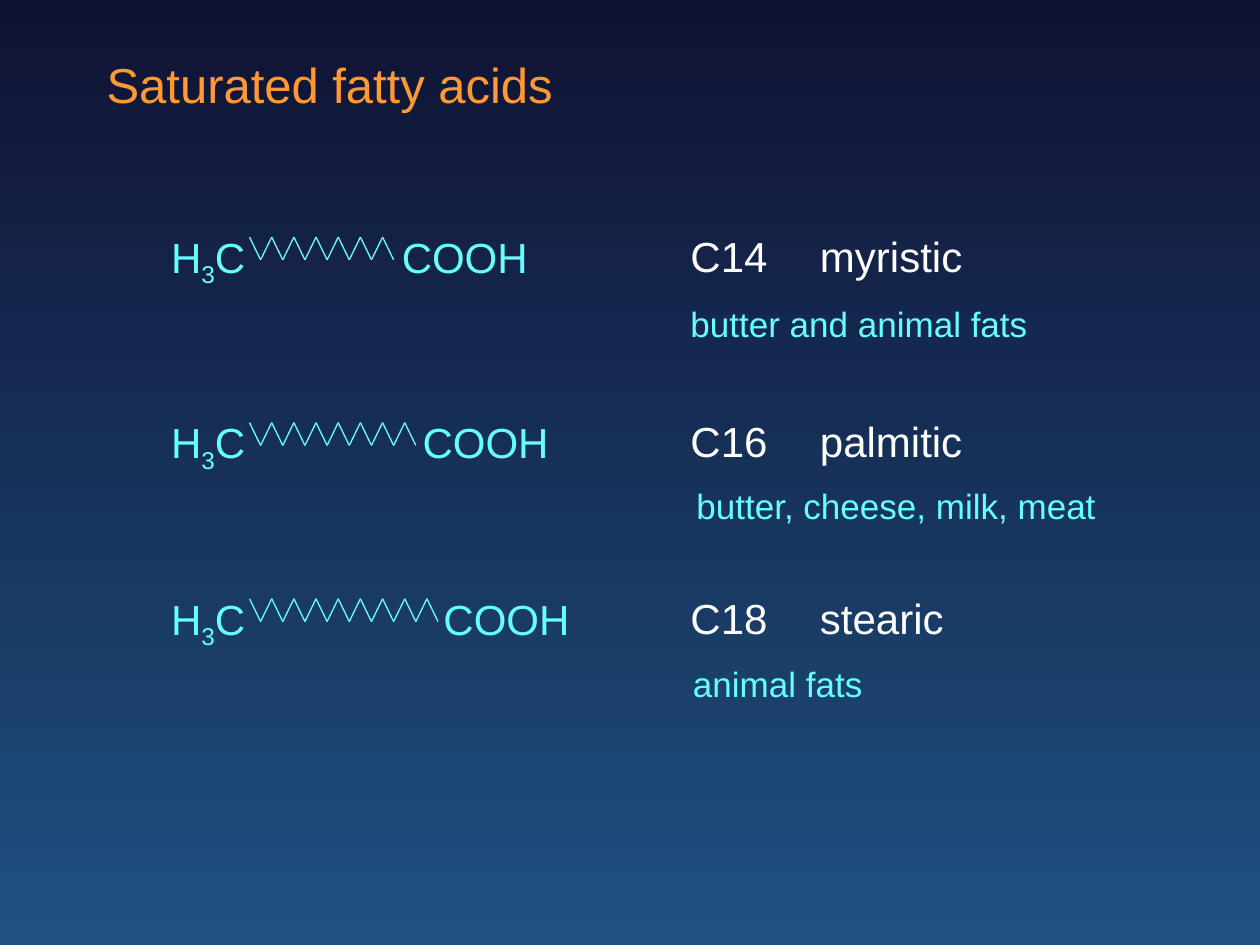
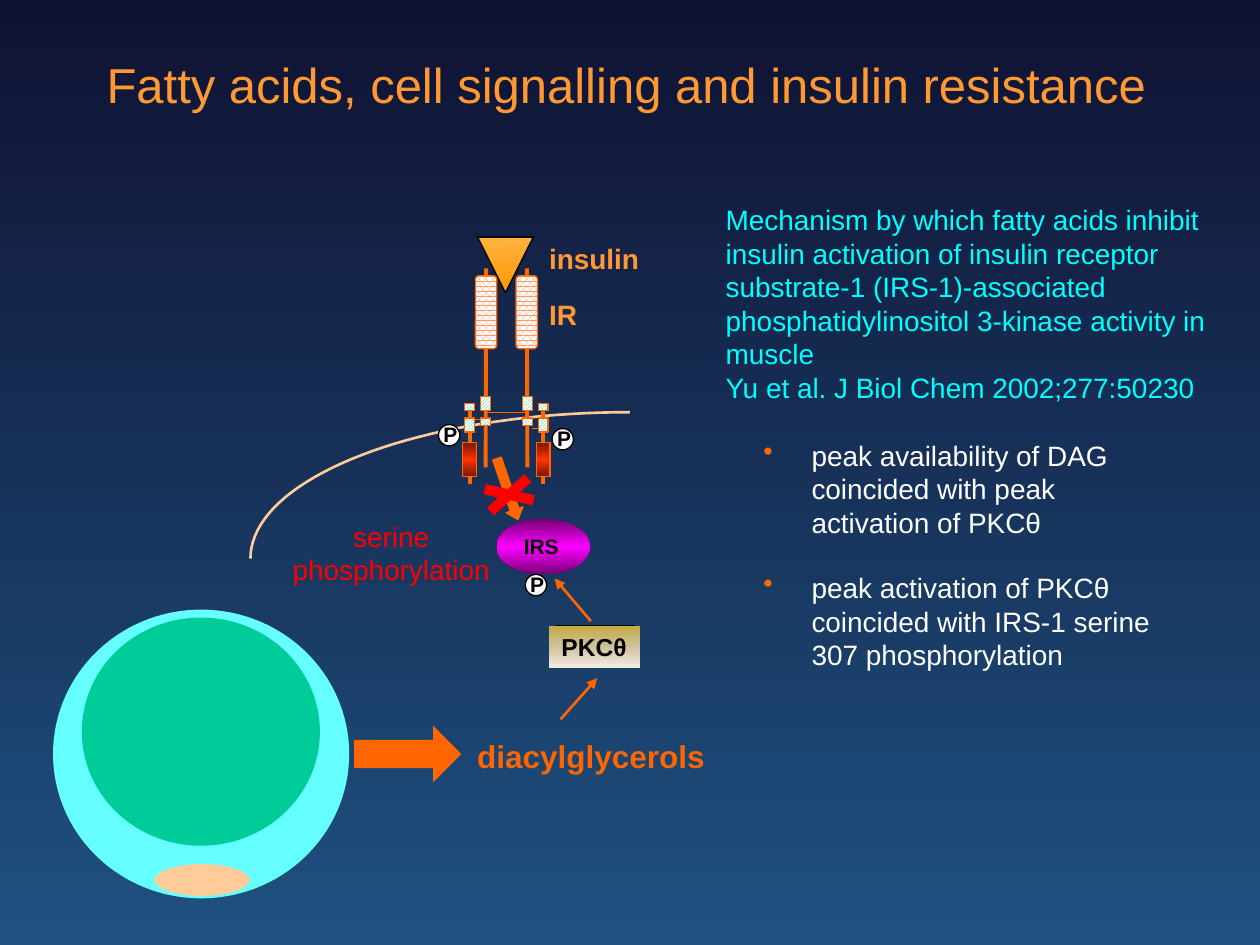
import math
from copy import deepcopy
from dataclasses import dataclass
from itertools import pairwise

from pptx import Presentation
from pptx import util as u
from pptx.dml.color import RGBColor
from pptx.enum import dml, shapes, text
from pptx.oxml.ns import qn
from lxml import etree


@dataclass(frozen=True)
class Theme:
    font: str = "Arial"
    sky: tuple = ("101232", "1E5180")
    title: str = "FF9933"
    white: str = "FFFFFF"
    black: str = "000000"
    pale_cyan: str = "66FFFF"
    cyan: str = "00FFFF"
    orange: str = "FF6600"
    red: str = "FF0000"
    green: str = "00CC99"
    peach: str = "FFCC99"
    salmon: str = "FF9966"
    insulin: tuple = ("FF9900", "FFB342")
    kinase: tuple = ("761800", "FF3300", "761800")
    substrate: tuple = ("760076", "FF00FF", "760076")
    enzyme: tuple = ("C4AB40", "CFC29D", "F4ECE4")
    title_size: int = 28
    formula_size: int = 24
    note_size: int = 20
    product_size: int = 18
    body_size: int = 16
    enzyme_size: int = 14
    small_size: int = 12
    thin: float = 0.75
    medium: float = 1.5
    thick: float = 2.25


THEME = Theme()
AXIS = 10.21


def apply(target, **values):
    for name, value in values.items():
        setattr(target, name, value)


def rgb(colour):
    return RGBColor.from_string(colour)


def paint_gradient(fill, element, colours):
    fill.gradient()
    fill.gradient_angle = 270
    stop_list = element.find(".//" + qn("a:gsLst"))
    for _ in colours[2:]:
        stop_list.append(deepcopy(stop_list[0]))
    for index, (stop, colour) in enumerate(zip(fill.gradient_stops, colours)):
        stop.color.rgb = rgb(colour)
        stop.position = index / (len(colours) - 1)


def paint_pattern(fill, pattern, colour):
    fill.patterned()
    fill.pattern = pattern
    fill.fore_color.rgb = rgb(colour)
    fill.back_color.rgb = rgb(THEME.white)


def paint(shape, colour):
    if isinstance(colour, tuple):
        paint_gradient(shape.fill, shape.element.spPr, colour)
    else:
        shape.fill.solid()
        shape.fill.fore_color.rgb = rgb(colour)


def outline(line, colour, width):
    line.color.rgb = rgb(colour)
    line.width = u.Pt(width)


def add_page(deck, title, width):
    page = deck.slides.add_slide(deck.slide_layouts[6])
    paint_gradient(page.background.fill, page.element, THEME.sky)
    add_label(page, title, 1.9, 0.97, width, THEME.title_size, THEME.title)
    return page


def add_span(para, words, size, colour, bold=False, baseline=0):
    span = para.add_run()
    span.text = words
    apply(span.font, name=THEME.font, size=u.Pt(size), bold=bold)
    span.font.color.rgb = rgb(colour)
    if baseline:
        span.font._element.set("baseline", str(baseline))


def add_box(page, left, top, width, height, wrap):
    box = page.shapes.add_textbox(*map(u.Cm, (left, top, width, height)))
    apply(box.text_frame, word_wrap=wrap, auto_size=text.MSO_AUTO_SIZE.SHAPE_TO_FIT_TEXT)
    return box


def add_label(page, words, left, top, width, size, colour, bold=False):
    box = add_box(page, left, top, width, size * 0.042 + 0.26, False)
    add_span(box.text_frame.paragraphs[0], words, size, colour, bold)
    return box


def add_paragraphs(page, place, lines, colour, **formats):
    frame = add_box(page, *place, True).text_frame
    for index, words in enumerate(lines):
        para = frame.add_paragraph() if index else frame.paragraphs[0]
        apply(para, **formats)
        add_span(para, words, THEME.body_size, colour)
    return frame


def add_bullets(page, place, lines):
    frame = add_paragraphs(page, place, lines, THEME.white, space_after=u.Pt(18))
    for para in frame.paragraphs:
        props = para._p.get_or_add_pPr()
        props.set("marL", str(u.Cm(0.97)))
        props.set("indent", str(-u.Cm(0.97)))
        bullet_colour = etree.SubElement(props, qn("a:buClr"))
        etree.SubElement(bullet_colour, qn("a:srgbClr"), val=THEME.orange)
        etree.SubElement(props, qn("a:buChar"), char="•")


def add_line(page, start, end, colour, width=THEME.thin, arrow=False):
    line = page.shapes.add_connector(
        shapes.MSO_CONNECTOR.STRAIGHT, *map(u.Cm, (*start, *end)))
    outline(line.line, colour, width)
    props = line.element.spPr
    if arrow:
        etree.SubElement(props.find(qn("a:ln")), qn("a:tailEnd"), type="triangle")
    etree.SubElement(props, qn("a:effectLst"))


def add_figure(page, kind, place, colour=None, border=None, pattern=None, rotation=0):
    figure = page.shapes.add_shape(
        getattr(shapes.MSO_SHAPE, kind), *map(u.Cm, place))
    figure.shadow.inherit = False
    figure.rotation = rotation
    if pattern:
        paint_pattern(figure.fill, pattern, colour)
    else:
        paint(figure, colour)
    if border:
        outline(figure.line, border, THEME.thin)
    else:
        figure.line.fill.background()
    return figure


def add_acid(page, carbons, name, name_width, top, source, source_place):
    bonds = carbons - 1
    step = 3.8 / 17
    size = THEME.formula_size
    methyl = add_box(page, 3.2, top + 0.02, 2.06, 1.27, False).text_frame.paragraphs[0]
    for words, baseline in (("H", 0), ("3", -25000), ("C", 0)):
        add_span(methyl, words, size, THEME.pale_cyan, baseline=baseline)
    joints = [(5.03 + i * step, top + (0.72 if i % 2 else 0.26))
              for i in range(bonds + 1)]
    for start, end in pairwise(joints):
        add_line(page, start, end, THEME.pale_cyan)
    add_label(page, "COOH", 7.85 + 0.21 * (bonds - 13), top + 0.02, 3.07,
              size, THEME.pale_cyan)
    add_label(page, f"C{carbons}", 13.67, top, 2.08, size, THEME.white)
    add_label(page, name, 16.28, top, name_width, size, THEME.white)
    add_label(page, source, *source_place, THEME.note_size, THEME.pale_cyan)


def add_membrane(page):
    angles = [math.radians(90 * i / 40) for i in range(41)]
    points = [(u.Cm(12.7 - 7.65 * math.sin(a)), u.Cm(11.26 - 2.95 * math.cos(a)))
              for a in angles]
    builder = page.shapes.build_freeform(*points[0])
    builder.add_line_segments(points[1:], close=False)
    membrane = builder.convert_to_shape()
    membrane.shadow.inherit = False
    membrane.fill.background()
    outline(membrane.line, THEME.peach, THEME.medium)


def add_receptor_half(page, side, link_top):
    def across(offset):
        return AXIS + side * offset

    def block(kind, offset, top, width, height, colour, pattern=None):
        place = (across(offset) - width / 2, top, width, height)
        add_figure(page, kind, place, colour, THEME.orange, pattern)

    add_line(page, (across(0.42), 9.42), (across(0.41), 5.41), THEME.orange, THEME.thick)
    block("ROUNDED_RECTANGLE", 0.41, 5.56, 0.43, 1.47, THEME.salmon,
          dml.MSO_PATTERN.PERCENT_75)
    add_line(page, (across(0.52), link_top), (across(0.65), link_top), THEME.orange)
    add_line(page, (across(0.74), 8.13), (across(0.74), 9.75), THEME.orange, THEME.thick)
    block("RECTANGLE", 0.74, 8.92, 0.28, 0.69, THEME.kinase)
    for offset, top, height in ((0.74, 8.43, 0.28), (0.74, 8.13, 0.15),
                                (0.42, 8.0, 0.28), (0.42, 8.43, 0.15)):
        block("RECTANGLE", offset, top, 0.2, height, THEME.green,
              dml.MSO_PATTERN.DARK_UPWARD_DIAGONAL)


def add_phosphate(page, left, top):
    add_figure(page, "OVAL", (left, top, 0.43, 0.43), THEME.white, THEME.black)
    add_label(page, "P", left - 0.15, top - 0.18, 0.79,
              THEME.small_size, THEME.black, True)


def add_fat_cell(page):
    for place, colour in (((1.07, 12.29, 5.97, 5.82), THEME.pale_cyan),
                          ((1.65, 12.45, 4.8, 4.6), THEME.green),
                          ((3.12, 17.42, 1.91, 0.64), THEME.peach)):
        add_figure(page, "OVAL", place, colour)


def add_enzyme(page):
    add_figure(page, "RECTANGLE", (11.23, 12.62, 1.55, 0.84), THEME.enzyme, THEME.black)
    box = add_label(page, "PKCθ", 11.07, 12.62, 1.83, THEME.enzyme_size, THEME.black, True)
    paint(box, THEME.enzyme)


def build_acids(deck):
    page = add_page(deck, "Saturated fatty acids", 9.63)
    for acid in (
        (14, "myristic", 3.4, 4.52, "butter and animal fats", (13.67, 5.97, 7.34)),
        (16, "palmitic", 3.4, 8.26, "butter, cheese, milk, meat", (13.79, 9.65, 8.61)),
        (18, "stearic", 3.02, 11.81, "animal fats", (13.72, 13.23, 3.96)),
    ):
        add_acid(page, *acid)


def build_signalling(deck):
    page = add_page(deck, "Fatty acids, cell signalling and insulin resistance", 21.74)
    add_membrane(page)
    add_figure(page, "ISOSCELES_TRIANGLE", (9.63, 4.78, 1.12, 1.12),
               THEME.insulin, THEME.black, rotation=180)
    for side, link_top in ((1, 8.64), (-1, 8.46)):
        add_receptor_half(page, side, link_top)
    add_line(page, (AXIS - 0.42, 8.31), (AXIS + 0.42, 8.31), THEME.orange)
    add_figure(page, "OVAL", (10.01, 10.46, 1.88, 1.12), THEME.substrate)
    signal = add_figure(page, "RIGHT_ARROW", (9.58, 9.68, 1.3, 0.36),
                        THEME.orange, THEME.orange, rotation=71.1)
    signal.adjustments[1] = 0.58
    add_enzyme(page)
    for words, left, top, width, size, colour in (
        ("insulin", 10.82, 4.75, 2.34, THEME.body_size, THEME.title),
        ("IR", 10.82, 5.87, 1.07, THEME.body_size, THEME.title),
        ("IRS", 10.31, 10.64, 1.22, THEME.small_size, THEME.black),
        ("diacylglycerols", 9.37, 14.73, 5.16, THEME.product_size, THEME.orange),
    ):
        add_label(page, words, left, top, width, size, colour, True)
    for left, top in ((8.84, 8.56), (11.13, 8.64), (10.59, 11.58)):
        add_phosphate(page, left, top)
    for start, end in (((11.91, 12.52), (11.18, 11.66)), ((11.3, 14.5), (12.04, 13.67))):
        add_line(page, start, end, THEME.orange, THEME.medium, True)
    add_figure(page, "MATH_MULTIPLY", (9.4, 9.53, 1.73, 0.89), THEME.red, rotation=345.6)
    add_fat_cell(page)
    add_figure(page, "RIGHT_ARROW", (7.14, 14.63, 2.16, 1.14), THEME.orange)
    add_paragraphs(page, (5.36, 10.34, 5.05, 1.63), ["serine phosphorylation"],
                   THEME.red, alignment=text.PP_ALIGN.CENTER)
    add_bullets(page, (15.14, 8.71, 8.66, 5.0), [
        "peak availability of DAG coincided with peak activation of PKCθ",
        "peak activation of PKCθ coincided with IRS-1 serine 307 phosphorylation",
    ])
    add_paragraphs(page, (14.38, 3.96, 10.44, 4.37), [
        "Mechanism by which fatty acids inhibit insulin activation of insulin receptor "
        "substrate-1 (IRS-1)-associated phosphatidylinositol 3-kinase activity in muscle",
        "Yu et al. J Biol Chem 2002;277:50230",
    ], THEME.cyan)


def main():
    deck = Presentation()
    apply(deck, slide_width=u.Cm(25.4), slide_height=u.Cm(19.05))
    build_acids(deck)
    build_signalling(deck)
    deck.save("out.pptx")


if __name__ == "__main__":
    main()
